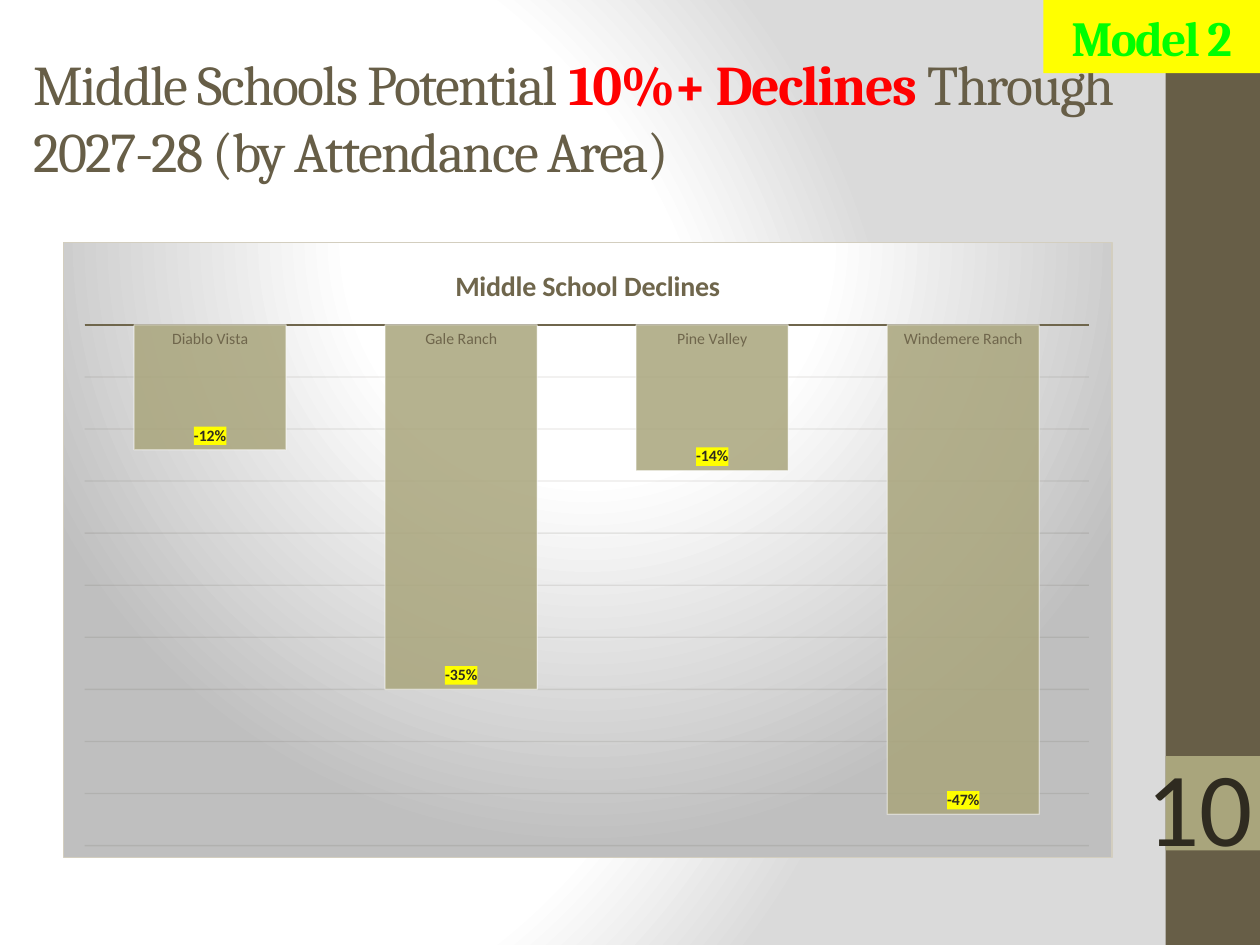
import pptx
import pptx.chart.data
import pptx.dml.color
import pptx.enum.chart
import pptx.enum.shapes
import pptx.enum.text
import pptx.oxml
import pptx.oxml.ns
import pptx.util
from dataclasses import dataclass

Inches = pptx.util.Inches
Pt = pptx.util.Pt
NAMESPACES = pptx.oxml.ns.nsdecls("a", "c")


@dataclass(frozen=True)
class Theme:
    heading_font: str = "Cambria"
    body_font: str = "Calibri"
    brown: str = "675E47"
    olive: str = "A9A57C"
    ink: str = "2F2B20"
    axis: str = "6F664C"
    grid: str = "3C3729"
    border: str = "D3CEBF"
    white: str = "FFFFFF"
    red: str = "FF0000"
    yellow: str = "FFFF00"
    green: str = "00FF00"
    title_size: int = 32
    tag_size: int = 28
    number_size: int = 60
    chart_title_size: int = 16
    chart_size: int = 10
    label_size: int = 9


THEME = Theme()


def rgb(color):
    return pptx.dml.color.RGBColor.from_string(color)


def style_font(font, name, size, color, bold=False):
    font.name = name
    font.size = Pt(size)
    font.color.rgb = rgb(color)
    font.bold = bold


def set_alpha(fill_parent, percent):
    """Make the solid colour inside an XML element partly transparent."""
    color = fill_parent.xpath(".//a:srgbClr")[0]
    color.append(pptx.oxml.parse_xml(f'<a:alpha {NAMESPACES} val="{percent * 1000}"/>'))


def circle_gradient(stops, center):
    """Return gradient XML; center holds left, top, right, bottom percentages."""
    stop_xml = "".join(
        f'<a:gs pos="{position * 1000}"><a:srgbClr val="{color}"/></a:gs>'
        for position, color in stops)
    sides = " ".join(f'{side}="{value * 1000}"' for side, value in zip("ltrb", center))
    return (f'<a:gradFill {NAMESPACES} rotWithShape="1"><a:gsLst>{stop_xml}</a:gsLst>'
            f'<a:path path="circle"><a:fillToRect {sides}/></a:path></a:gradFill>')


def set_background(page):
    page.background.fill.solid()
    page.background.fill.fore_color.rgb = rgb(THEME.white)
    solid = page.element.xpath(".//p:bgPr/a:solidFill")[0]
    gradient = circle_gradient(
        [(0, THEME.white), (75, THEME.white), (100, "DADADA")], (20, 50, 100, 50))
    solid.getparent().replace(solid, pptx.oxml.parse_xml(gradient))


def add_block(page, left, top, width, height, color):
    block = page.shapes.add_shape(
        pptx.enum.shapes.MSO_SHAPE.RECTANGLE,
        Inches(left), Inches(top), Inches(width), Inches(height))
    block.shadow.inherit = False
    block.fill.solid()
    block.fill.fore_color.rgb = rgb(color)
    block.line.fill.background()
    return block


def add_text_box(page, left, top, width, height):
    box = page.shapes.add_textbox(
        Inches(left), Inches(top), Inches(width), Inches(height))
    box.text_frame.word_wrap = True
    return box


def write_spans(frame, spans, font, size, spacing=0):
    """Fill the first paragraph with (text, color, bold) spans."""
    frame.vertical_anchor = pptx.enum.text.MSO_ANCHOR.MIDDLE
    para = frame.paragraphs[0]
    for text, color, bold in spans:
        span = para.add_run()
        span.text = text
        style_font(span.font, font, size, color, bold)
        if spacing:
            span.font._element.set("spc", str(spacing * 100))
    return para


def add_decline_chart(page):
    data = pptx.chart.data.CategoryChartData(number_format="0%")
    data.categories = ["Diablo Vista", "Gale Ranch", "Pine Valley", "Windemere Ranch"]
    data.add_series("Series 1", [-0.12, -0.35, -0.14, -0.47])
    chart = page.shapes.add_chart(
        pptx.enum.chart.XL_CHART_TYPE.COLUMN_CLUSTERED,
        Inches(0.5), Inches(1.92), Inches(8.33), Inches(4.89), data).chart
    style_font(chart.font, THEME.body_font, THEME.chart_size, THEME.ink)
    chart.has_legend = False
    chart.has_title = True
    chart.chart_title.text_frame.text = "Middle School Declines"
    title_span = chart.chart_title.text_frame.paragraphs[0].runs[0]
    style_font(title_span.font, THEME.body_font, THEME.chart_title_size, THEME.axis, True)
    style_axes(chart)
    style_columns(chart.plots[0])
    style_chart_area(chart)


def style_axes(chart):
    no_tick = pptx.enum.chart.XL_TICK_MARK.NONE
    schools = chart.category_axis
    schools.major_tick_mark = schools.minor_tick_mark = no_tick
    style_font(schools.tick_labels.font, THEME.body_font, THEME.label_size, THEME.axis)
    schools.format.line.color.rgb = rgb(THEME.axis)
    schools.format.line.width = Pt(1.5)

    share = chart.value_axis
    share.minimum_scale, share.maximum_scale, share.major_unit = -0.5, 0, 0.05
    share.has_major_gridlines = True
    grid_line = share.major_gridlines.format.line
    grid_line.color.rgb = rgb(THEME.grid)
    grid_line.width = Pt(0.75)
    set_alpha(share._element.xpath("c:majorGridlines")[0], 10)
    share.tick_labels.number_format = "0%"
    share.tick_labels.number_format_is_linked = False
    share.visible = False


def style_columns(plot):
    plot.gap_width = 65
    plot.vary_by_categories = False
    series = plot.series[0]
    series.invert_if_negative = False
    series.format.fill.solid()
    series.format.fill.fore_color.rgb = rgb(THEME.olive)
    series.format.line.color.rgb = rgb(THEME.white)
    series.format.line.width = Pt(0.75)
    set_alpha(series._element.xpath("c:spPr/a:solidFill")[0], 85)
    set_alpha(series._element.xpath("c:spPr/a:ln")[0], 50)

    labels = series.data_labels
    labels.show_value = True
    labels.number_format = "0%"
    labels.number_format_is_linked = False
    labels.position = pptx.enum.chart.XL_LABEL_POSITION.INSIDE_END
    style_font(labels.font, THEME.body_font, THEME.label_size, THEME.ink, True)
    labels._element.xpath("c:txPr")[0].addprevious(pptx.oxml.parse_xml(
        f'<c:spPr {NAMESPACES}><a:solidFill><a:srgbClr val="{THEME.yellow}"/>'
        '</a:solidFill></c:spPr>'))


def style_chart_area(chart):
    # Gradient panel with a thin border
    gradient = circle_gradient(
        [(0, THEME.white), (39, THEME.white), (100, "BFBFBF")], (50, -80, 50, 180))
    chart.element.xpath("c:chart")[0].addnext(pptx.oxml.parse_xml(
        f'<c:spPr {NAMESPACES}>{gradient}<a:ln w="9525"><a:solidFill>'
        f'<a:srgbClr val="{THEME.border}"/></a:solidFill></a:ln></c:spPr>'))
    # Fixed plot area, as fractions of the chart
    plot_area = chart.element.xpath("c:chart/c:plotArea")[0]
    for layout in plot_area.xpath("c:layout"):
        plot_area.remove(layout)
    places = "".join(f'<c:{name} val="{value}"/>' for name, value in
                     [("x", 0.02), ("y", 0.134), ("w", 0.958), ("h", 0.847)])
    plot_area.insert(0, pptx.oxml.parse_xml(
        f'<c:layout {NAMESPACES}><c:manualLayout><c:layoutTarget val="inner"/>'
        f'<c:xMode val="edge"/><c:yMode val="edge"/>{places}'
        '</c:manualLayout></c:layout>'))


def main():
    deck = pptx.Presentation()
    deck.slide_width, deck.slide_height = Inches(10), Inches(7.5)
    page = deck.slides.add_slide(deck.slide_layouts[6])
    set_background(page)

    # Side band
    add_block(page, 9.25, 0, 0.75, 7.5, THEME.brown)
    add_block(page, 9.25, 6, 0.75, 0.75, THEME.olive)

    # Title
    title = add_text_box(page, 0.17, 0.3, 8.92, 1.25)
    write_spans(title.text_frame, [
        ("Middle Schools Potential ", THEME.brown, False),
        ("10%+ Declines ", THEME.red, True),
        ("Through 2027-28 (by Attendance Area)", THEME.brown, False),
    ], THEME.heading_font, THEME.title_size, -1)

    # Page number
    number = add_text_box(page, 9, 5.83, 1.21, 1.11)
    write_spans(number.text_frame, [("10", THEME.ink, False)],
                THEME.body_font, THEME.number_size)

    # Model tag
    tag = add_block(page, 8.28, 0, 1.72, 0.58, THEME.yellow)
    para = write_spans(tag.text_frame, [("Model 2", THEME.green, True)],
                       THEME.heading_font, THEME.tag_size, -1)
    para.alignment = pptx.enum.text.PP_ALIGN.CENTER

    add_decline_chart(page)
    deck.save("out.pptx")


if __name__ == "__main__":
    main()
